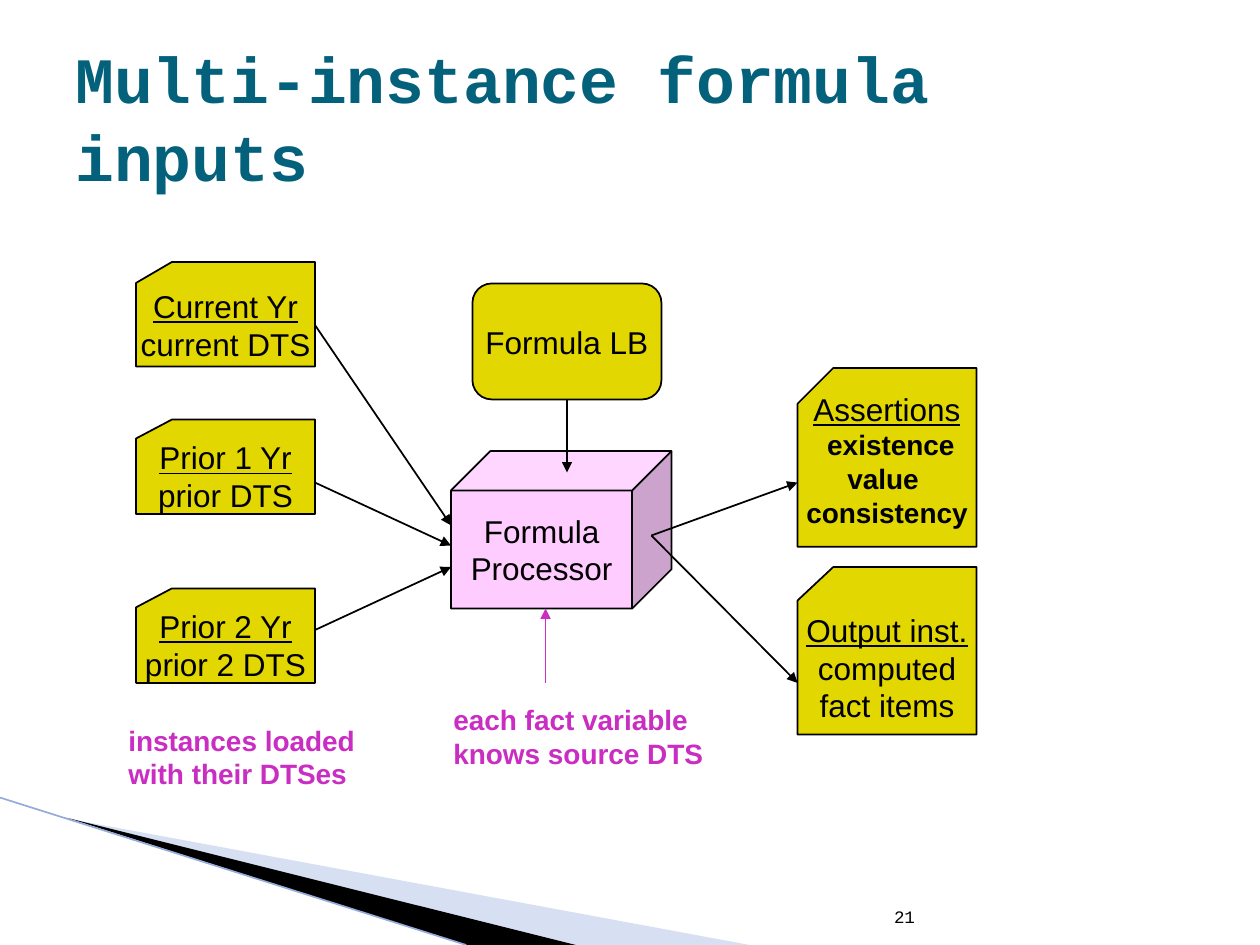
import pptx
import pptx.util
import pptx.dml.color
import pptx.enum.shapes
import pptx.enum.text
import pptx.oxml
import pptx.oxml.ns
import lxml.etree

Inches = pptx.util.Inches
Pt = pptx.util.Pt
SHAPE = pptx.enum.shapes.MSO_SHAPE
ANCHOR = pptx.enum.text.MSO_ANCHOR
ALIGN = pptx.enum.text.PP_ALIGN
qn = pptx.oxml.ns.qn
rgb = pptx.dml.color.RGBColor.from_string

BLACK, YELLOW, PINK, MAGENTA = "000000", "E2D700", "FFCCFF", "C92DC2"


def write(frame, text, size, color=BLACK, font="Arial", bold=False,
          align=ALIGN.LEFT, anchor=ANCHOR.TOP, wrap=True):
    frame.text = text
    frame.word_wrap = wrap
    frame.vertical_anchor = anchor
    for paragraph in frame.paragraphs:
        paragraph.alignment = align
        for run in paragraph.runs:
            run.font.size = Pt(size)
            run.font.name = font
            run.font.bold = bold
            run.font.color.rgb = rgb(color)


def draw_line(start, end, color, width, arrow=True):
    line = slide.shapes.add_connector(
        pptx.enum.shapes.MSO_CONNECTOR.STRAIGHT, *map(Inches, start + end))
    line.line.color.rgb = rgb(color)
    line.line.width = Pt(width)
    if arrow:
        lxml.etree.SubElement(line.line._get_or_add_ln(), qn("a:tailEnd"), type="triangle")
    lxml.etree.SubElement(line._element.spPr, qn("a:effectLst"))


presentation = pptx.Presentation()
presentation.slide_width = Inches(10)
presentation.slide_height = Inches(7.5)
slide = presentation.slides.add_slide(presentation.slide_layouts[6])

swooshes = [
    ("9DB2E1", 40, [(0.55, 6.5), (5.95, 7.5), (4.56, 7.5)]),
    (BLACK, 100, [(0.53, 6.49), (4.57, 7.5), (3.7, 7.5)]),
]
for color, opacity, corners in swooshes:
    points = [(Inches(x), Inches(y)) for x, y in corners]
    builder = slide.shapes.build_freeform(*points[0])
    builder.add_line_segments(points[1:])
    swoosh = builder.convert_to_shape()
    swoosh.shadow.inherit = False
    swoosh.fill.solid()
    swoosh.fill.fore_color.rgb = rgb(color)
    swoosh.line.fill.background()
    if opacity < 100:
        tint = swoosh._element.spPr.find(qn("a:solidFill"))[0]
        lxml.etree.SubElement(tint, qn("a:alpha"), val=str(opacity * 1000))
draw_line((0, 6.33), (3.7, 7.5), "94ABDC", 0.95, arrow=False)

captions = [
    ((4.79, 7.01, 2.57, 0.4), "21",
     dict(size=10, font="Courier New", align=ALIGN.RIGHT, anchor=ANCHOR.BOTTOM)),
    ((0.5, 0.3, 9, 1.25), "Multi-instance formula inputs",
     dict(size=37, color="04617B", font="Courier New", bold=True, anchor=ANCHOR.MIDDLE)),
    ((3.5, 5.53, 2.25, 0.64), "each fact variable\nknows source DTS",
     dict(size=16, color=MAGENTA, bold=True)),
    ((0.92, 5.69, 2.08, 0.64), "instances loaded\nwith their DTSes",
     dict(size=16, color=MAGENTA, bold=True)),
]
for bounds, text, style in captions:
    caption = slide.shapes.add_textbox(*map(Inches, bounds))
    write(caption.text_frame, text, **style)

CARD = SHAPE.FLOWCHART_CARD
nodes = [
    (SHAPE.ROUNDED_RECTANGLE, (3.75, 2.25, 1.5, 0.92), YELLOW, "Formula LB"),
    (SHAPE.CUBE, (3.58, 3.58, 1.75, 1.25), PINK, "Formula\vProcessor"),
    (CARD, (1.08, 2.08, 1.42, 0.83), YELLOW, "Current Yr\ncurrent DTS"),
    (CARD, (1.08, 3.33, 1.42, 0.75), YELLOW, "Prior 1 Yr\nprior DTS"),
    (CARD, (1.08, 4.67, 1.42, 0.75), YELLOW, "Prior 2 Yr\nprior 2 DTS"),
    (CARD, (6.33, 4.5, 1.42, 1.33), YELLOW, "Output inst.\vcomputed\vfact items"),
    (CARD, (6.33, 2.92, 1.42, 1.42), YELLOW, "Assertions\v existence\nvalue \nconsistency"),
]
for preset, bounds, color, text in nodes:
    node = slide.shapes.add_shape(preset, *map(Inches, bounds))
    node.shadow.inherit = False
    node.fill.solid()
    node.fill.fore_color.rgb = rgb(color)
    node.line.color.rgb = rgb(BLACK)
    node.line.width = Pt(1)
    write(node.text_frame, text, 18, align=ALIGN.CENTER, anchor=ANCHOR.MIDDLE, wrap=False)
    if preset == CARD:
        node.text_frame.paragraphs[0].runs[0].font.underline = True

assertions = node.text_frame
assertions.margin_bottom = Inches(0.3)
assertion_kinds = [run for paragraph in assertions.paragraphs for run in paragraph.runs][1:]
for kind in assertion_kinds:
    kind.font.size = Pt(16)
    kind.font.bold = True

arrows = [
    ((4.5, 3.17), (4.5, 3.75), BLACK),
    ((5.17, 4.25), (6.33, 3.83), BLACK),
    ((5.17, 4.25), (6.33, 5.42), BLACK),
    ((2.5, 2.58), (3.58, 4.17), BLACK),
    ((2.5, 3.83), (3.58, 4.33), BLACK),
    ((2.5, 5), (3.58, 4.5), BLACK),
    ((4.33, 5.42), (4.33, 4.83), MAGENTA),
]
for start, end, color in arrows:
    draw_line(start, end, color, 1)

presentation.save("out.pptx")
